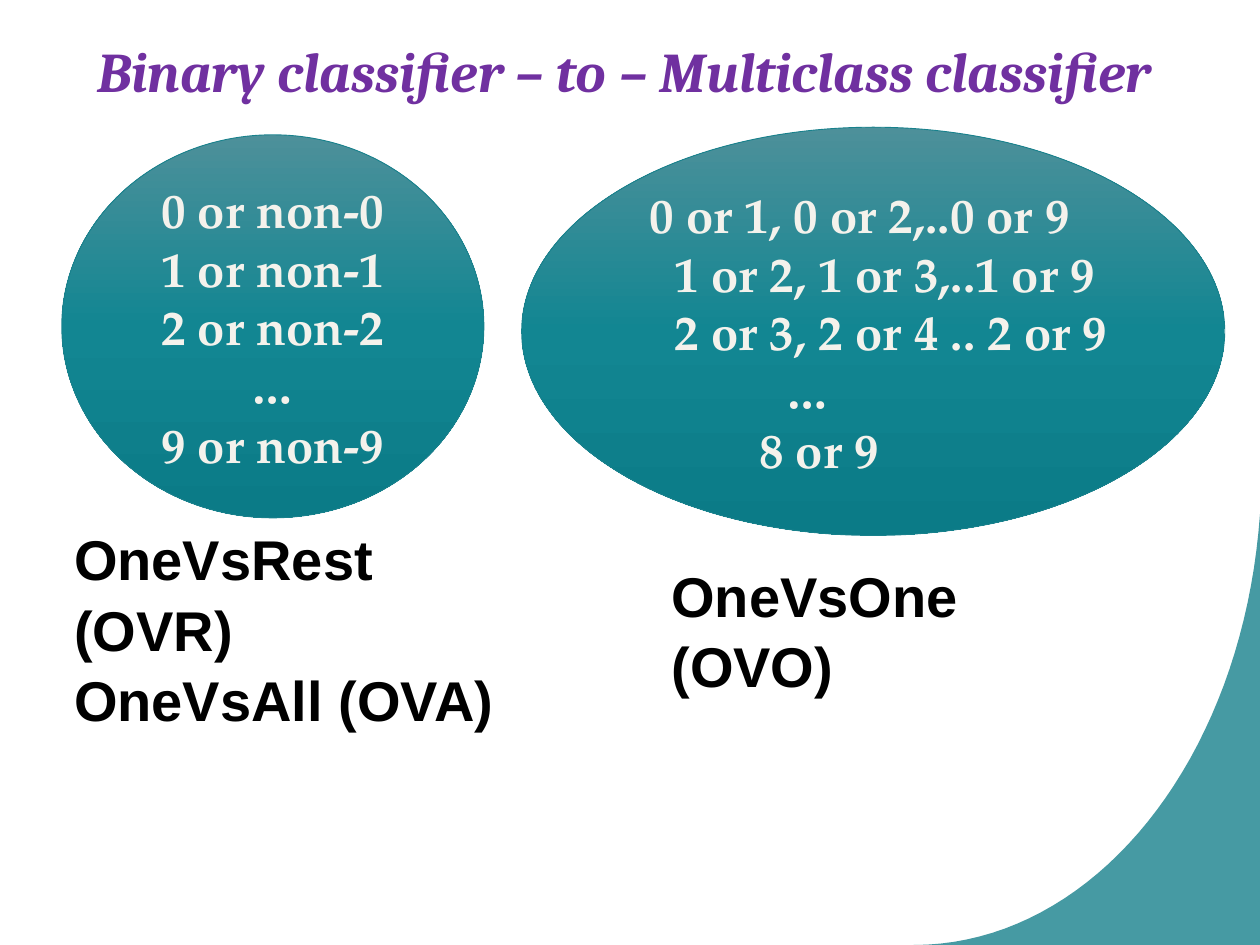
from copy import deepcopy

from lxml import etree
from pptx import Presentation
from pptx.dml.color import RGBColor
from pptx.enum import shapes, text
from pptx.oxml.ns import qn
from pptx.util import Inches, Pt

PURPLE = RGBColor(0x70, 0x30, 0xA0)
BLACK = RGBColor(0, 0, 0)
CREAM = RGBColor(0xF4, 0xF2, 0xEC)
TEAL = RGBColor(0x18, 0x81, 0x8C)
SHADES = [(0, RGBColor(0x4D, 0x90, 0x9A)),
          (0.5, RGBColor(0x12, 0x86, 0x92)),
          (1, RGBColor(0x0B, 0x7B, 0x87))]
LEFT, CENTER = text.PP_ALIGN.LEFT, text.PP_ALIGN.CENTER


def write(frame, lines, face, size, color, align=LEFT, italic=False):
    frame.text = "\n".join(lines)
    frame.word_wrap = True
    for para in frame.paragraphs:
        para.alignment = align
        for run in para.runs:
            font = run.font
            font.name, font.size = face, Pt(size)
            font.bold, font.italic = True, italic
            font.color.rgb = color


def corner(slide, left, top, width, height):
    """Fill the area below a quarter curve in the bottom right corner."""
    bend = [(0, 1), (0.52, 1), (0.95, 0.57), (1, 0)]
    steps = 40
    points = []
    for i in range(steps + 1):
        t = i / steps
        parts = [(1 - t) ** 3, 3 * t * (1 - t) ** 2, 3 * t * t * (1 - t), t ** 3]
        x = sum(k * p[0] for k, p in zip(parts, bend))
        y = sum(k * p[1] for k, p in zip(parts, bend))
        points.append((Inches(left + x * width), Inches(top + y * height)))
    points.append((Inches(left + width), Inches(top + height)))
    draft = slide.shapes.build_freeform(*points[0])
    draft.add_line_segments(points[1:], close=True)
    shape = draft.convert_to_shape()
    shape.shadow.inherit = False
    shape.line.fill.background()
    shape.fill.solid()
    shape.fill.fore_color.rgb = TEAL
    tint = shape._element.spPr.find(".//" + qn("a:srgbClr"))
    etree.SubElement(tint, qn("a:alpha"), val="80000")


def heading(slide, words, *box):
    title = slide.shapes.title
    title.left, title.top, title.width, title.height = map(Inches, box)
    write(title.text_frame, [words], "Cambria", 32, PURPLE, italic=True)


def shade(shape):
    """Apply the three-stop vertical gradient."""
    shape.fill.gradient()
    shape.fill.gradient_angle = 270
    stops = shape._element.spPr.find(".//" + qn("a:gsLst"))
    stops.append(deepcopy(stops[-1]))
    for stop, (place, color) in zip(shape.fill.gradient_stops, SHADES):
        stop.position = place
        stop.color.rgb = color


def oval(slide, lines, box, align=CENTER, indents=()):
    shape = slide.shapes.add_shape(shapes.MSO_SHAPE.OVAL, *map(Inches, box))
    shape.shadow.inherit = False
    shade(shape)
    shape.line.color.rgb = TEAL
    shape.line.width = Pt(0.5)
    frame = shape.text_frame
    frame.vertical_anchor = text.MSO_ANCHOR.MIDDLE
    frame.margin_right = 0 if indents else Inches(0.1)
    write(frame, lines, "TeX Gyre Pagella", 28, CREAM, align)
    for para, indent in zip(frame.paragraphs, indents):
        para._p.get_or_add_pPr().set("marL", str(Inches(indent)))


def label(slide, lines, *box):
    frame = slide.shapes.add_textbox(*map(Inches, box)).text_frame
    write(frame, lines, "Arial", 32, BLACK)
    for para in frame.paragraphs:
        para.line_spacing = 1.05


def main():
    deck = Presentation()
    deck.slide_width, deck.slide_height = Inches(10), Inches(7.5)
    slide = deck.slides.add_slide(deck.slide_layouts[5])
    corner(slide, 7.25, 4.08, 2.75, 3.42)
    heading(slide, "Binary classifier – to – Multiclass classifier",
            0.67, 0.24, 8.9, 0.64)
    rest = [f"{n} or non-{n}" for n in (0, 1, 2, 9)]
    rest.insert(3, "…")
    oval(slide, rest, (0.49, 1.07, 3.35, 3.04))
    label(slide, ["OneVsRest (OVR)", "OneVsAll (OVA)"], 0.49, 4.09, 3.66, 1.18)
    pairs = ["0 or 1, 0 or 2,..0 or 9", "1 or 2, 1 or 3,..1 or 9",
             "2 or 3, 2 or 4 .. 2 or 9", "…", "8 or 9"]
    oval(slide, pairs, (4.14, 1.01, 5.58, 3.24), LEFT, (0.1, 0.3, 0.3, 1.19, 0.97))
    label(slide, ["OneVsOne (OVO)"], 5.23, 4.38, 3.68, 0.64)
    deck.save("out.pptx")


if __name__ == "__main__":
    main()
